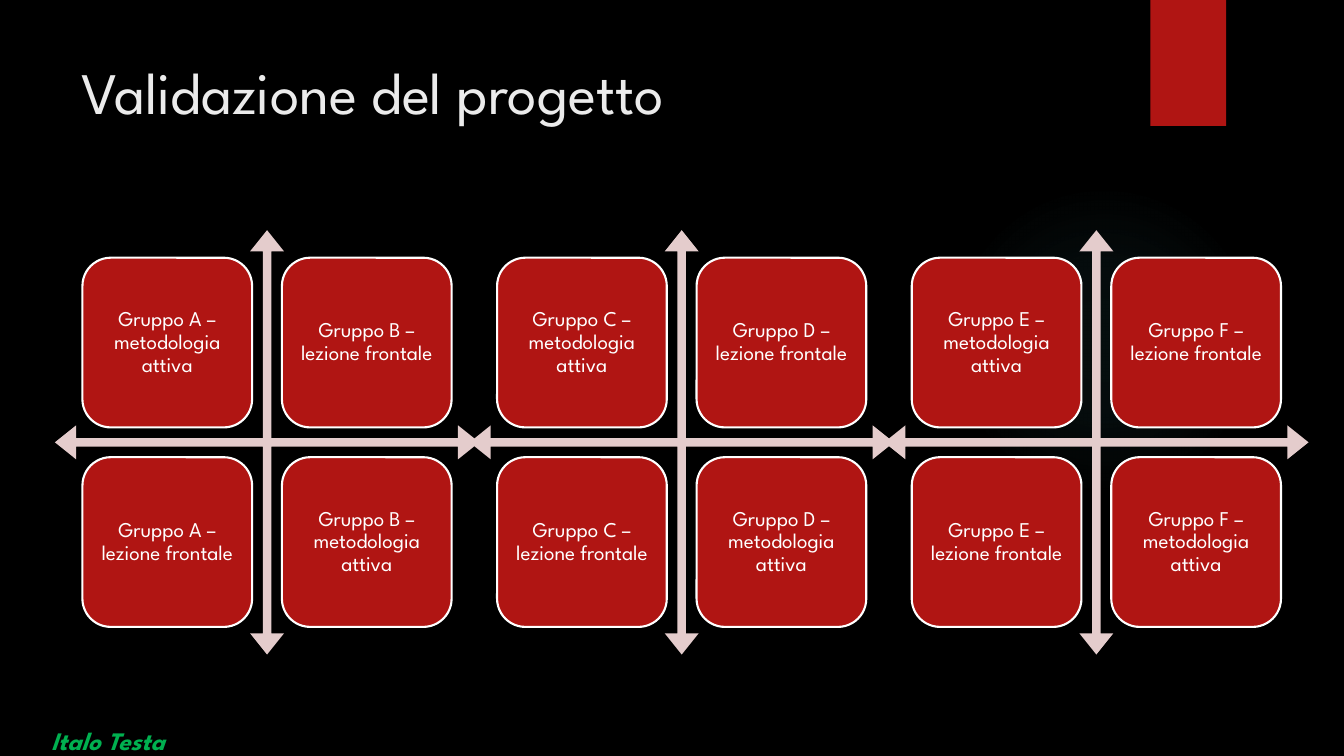
from lxml.etree import SubElement
from pptx import Presentation
from pptx.dml.color import RGBColor
from pptx.enum.shapes import MSO_SHAPE
from pptx.enum.text import MSO_ANCHOR, PP_ALIGN
from pptx.oxml.ns import qn
from pptx.util import Pt

FONT = "League Spartan"
RED = "B01513"
WHITE = "FFFFFF"
ACTIVE = "metodologia attiva"
FRONTAL = "lezione frontale"

ARROW_SIZE = 303.1
CARD_SIZE = 121.2
CARD_OFFSETS = (19.7, 162.2)
MATRIX_LEFT = 39.2
MATRIX_TOP = 164.4
MATRIX_PITCH = 296.2


def color(hex_text):
    return RGBColor.from_string(hex_text)


def write_text(shape, text, size, hex_color, align=PP_ALIGN.LEFT, anchor=MSO_ANCHOR.TOP,
               spacing=1.0, inset=None, wrap=True, bold=False, italic=False):
    frame = shape.text_frame
    frame.word_wrap = wrap
    frame.vertical_anchor = anchor
    if inset is not None:
        frame.margin_left = frame.margin_right = Pt(inset)
        frame.margin_top = frame.margin_bottom = Pt(inset)
    paragraph = frame.paragraphs[0]
    paragraph.text = text
    paragraph.alignment = align
    paragraph.line_spacing = spacing
    font = paragraph.runs[0].font
    font.name = FONT
    font.size = Pt(size)
    font.bold = bold
    font.italic = italic
    font.color.rgb = color(hex_color)


def add_block(slide, kind, left, top, width, height, fill=None, line=None):
    shape = slide.shapes.add_shape(kind, Pt(left), Pt(top), Pt(width), Pt(height))
    shape.shadow.inherit = False
    if fill:
        shape.fill.solid()
        shape.fill.fore_color.rgb = color(fill)
    else:
        shape.fill.background()
    if line:
        shape.line.color.rgb = color(line)
        shape.line.width = Pt(1.5)
    else:
        shape.line.fill.background()
    return shape


def add_glow(slide, left, top, size):
    glow = add_block(slide, MSO_SHAPE.OVAL, left, top, size, size)
    properties = glow._element.spPr
    empty_fill = properties.find(qn("a:noFill"))
    gradient = SubElement(properties, qn("a:gradFill"))
    properties.replace(empty_fill, gradient)
    stops = SubElement(gradient, qn("a:gsLst"))
    for position, opacity in ((0, 7), (36, 6), (69, 0)):
        stop = SubElement(stops, qn("a:gs"), pos=str(position * 1000))
        tint = SubElement(stop, qn("a:srgbClr"), val="50B9C1")
        SubElement(tint, qn("a:alpha"), val=str(opacity * 1000))
    circle = SubElement(gradient, qn("a:path"), path="circle")
    SubElement(circle, qn("a:fillToRect"), l="50000", t="50000", r="50000", b="50000")


def add_matrix(slide, left, top, groups):
    arrow = add_block(slide, MSO_SHAPE.QUAD_ARROW, left, top, ARROW_SIZE, ARROW_SIZE, "E4CCCC")
    for index, value in enumerate((0.02, 0.04, 0.05)):
        arrow.adjustments[index] = value
    for row, y in enumerate(CARD_OFFSETS):
        for column, x in enumerate(CARD_OFFSETS):
            method = ACTIVE if row == column else FRONTAL
            card = add_block(slide, MSO_SHAPE.ROUNDED_RECTANGLE, left + x, top + y,
                             CARD_SIZE, CARD_SIZE, RED, WHITE)
            write_text(card, f"Gruppo {groups[column]} – {method}", 15, WHITE,
                       align=PP_ALIGN.CENTER, anchor=MSO_ANCHOR.MIDDLE,
                       spacing=0.9, inset=4.5)


def add_title(slide, text):
    title = slide.shapes.title
    title.left, title.top, title.width, title.height = Pt(51), Pt(36), Pt(741), Pt(110)
    write_text(title, text, 42, "EBEBEB")


def add_author(slide, name):
    box = slide.shapes.add_textbox(Pt(29.5), Pt(499.7), Pt(103), Pt(39))
    write_text(box, name, 18, "00B050", spacing=1.7, wrap=False, bold=True, italic=True)


def main():
    presentation = Presentation()
    presentation.slide_width = Pt(960)
    presentation.slide_height = Pt(540)
    slide = presentation.slides.add_slide(presentation.slide_layouts[5])
    slide.background.fill.solid()
    slide.background.fill.fore_color.rgb = color("000000")

    add_glow(slide, 677.5, 131.8, 221.8)
    add_block(slide, MSO_SHAPE.RECTANGLE, 821.8, 0, 54, 90, RED)
    add_title(slide, "Validazione del progetto")
    for index, groups in enumerate(("AB", "CD", "EF")):
        add_matrix(slide, MATRIX_LEFT + index * MATRIX_PITCH, MATRIX_TOP, groups)
    add_author(slide, "Italo Testa")
    presentation.save("out.pptx")


if __name__ == "__main__":
    main()
